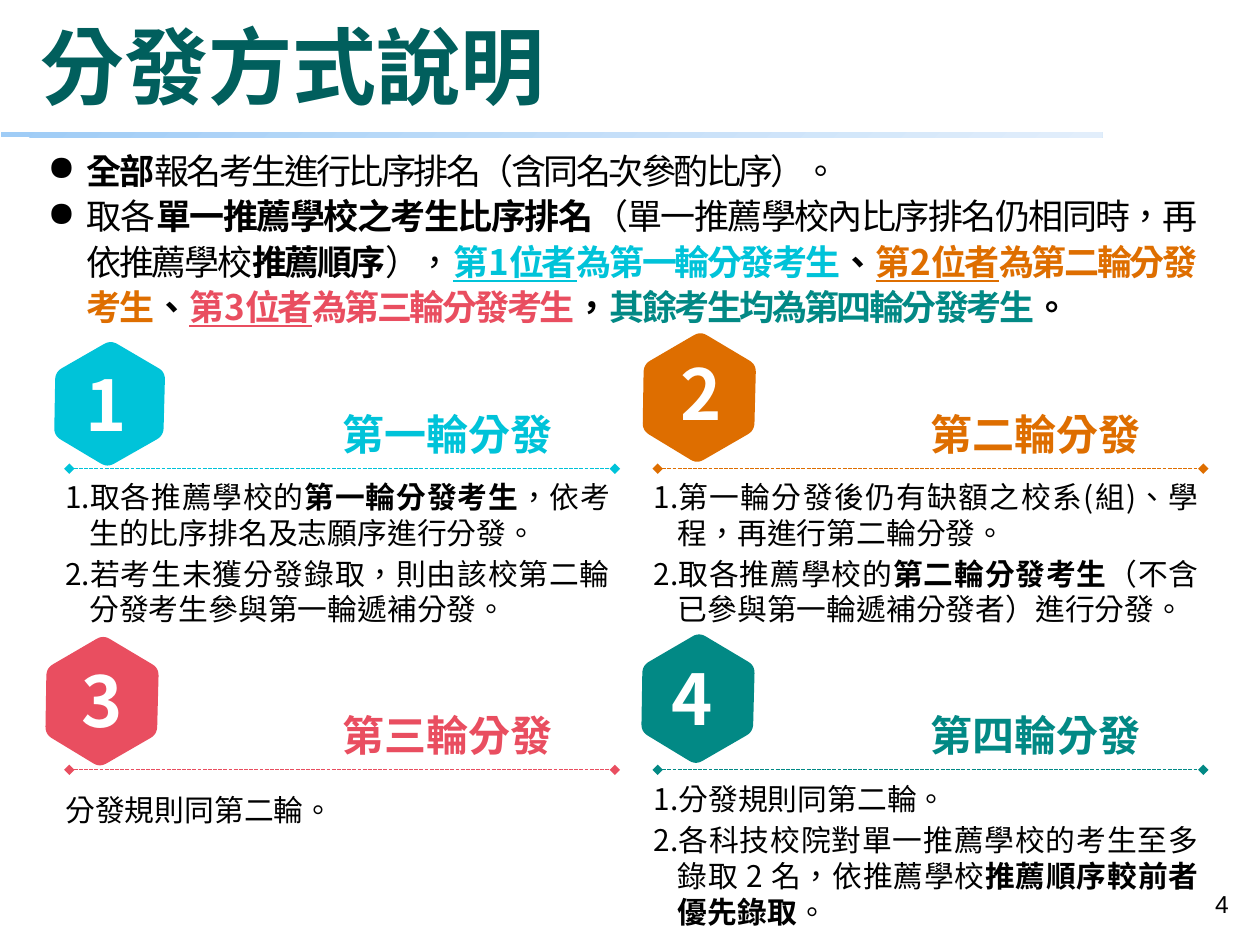
import math
import lxml.etree
import pptx
import pptx.dml.color
import pptx.enum.dml
import pptx.enum.shapes
import pptx.enum.text
import pptx.oxml.ns
import pptx.util

RGB = pptx.dml.color.RGBColor
CYAN = RGB(0x00, 0xC3, 0xD9)
ORANGE = RGB(0xDE, 0x6E, 0x00)
RED = RGB(0xE9, 0x4E, 0x60)
TEAL = RGB(0x02, 0x89, 0x85)
DARK = RGB(0x01, 0x5F, 0x5D)
PALE = RGB(0xE2, 0xEE, 0xFB)
SKY = RGB(0x9F, 0xCC, 0xF6)
BLACK = RGB(0, 0, 0)
WHITE = RGB(255, 255, 255)

COLS, ROWS = 100, 75
CORNERS = [(0.02, -1), (1, -0.5), (0.97, 0.5), (-0.04, 1), (-1, 0.5), (-0.98, -0.5)]
ALIGN = pptx.enum.text.PP_ALIGN
ANCHOR = pptx.enum.text.MSO_ANCHOR
FIT = pptx.enum.text.MSO_AUTO_SIZE


def add_node(parent, tag, **attrs):
    node = lxml.etree.SubElement(parent, pptx.oxml.ns.qn(tag))
    for name, value in attrs.items():
        node.set(name, value)
    return node


def write(para, text, size=17, color=BLACK, bold=False, under=False,
          face="Noto Sans CJK SC", track=None):
    run = para.add_run()
    run.text = text
    font = run.font
    font.size = pptx.util.Pt(size)
    font.bold = bold
    font.underline = under
    font.color.rgb = color
    font.name = face
    props = run._r.get_or_add_rPr()
    props.set("lang", "zh-TW")
    if track is not None:
        props.set("spc", str(round(track * 100)))
    add_node(props, "a:ea", typeface=face)


class Board:
    def __init__(self):
        self.deck = pptx.Presentation()
        self.deck.slide_width = pptx.util.Inches(10)
        self.deck.slide_height = pptx.util.Inches(7.5)
        self.slide = self.deck.slides.add_slide(self.deck.slide_layouts[5])
        self.shapes = self.slide.shapes

    def x(self, cols):
        return round(self.deck.slide_width * cols / COLS)

    def y(self, rows):
        return round(self.deck.slide_height * rows / ROWS)

    def box(self, left, top, width, height):
        return self.x(left), self.y(top), self.x(width), self.y(height)

    def title(self, text, *place):
        shape = self.shapes.title
        shape.left, shape.top, shape.width, shape.height = self.box(*place)
        frame = shape.text_frame
        frame.auto_size = FIT.NONE
        frame.vertical_anchor = ANCHOR.MIDDLE
        para = frame.paragraphs[0]
        para.alignment = ALIGN.LEFT
        write(para, text, size=48, color=DARK, bold=True)

    def bar(self, *place):
        shape = self.shapes.add_shape(
            pptx.enum.shapes.MSO_SHAPE.RECTANGLE, *self.box(*place))
        shape.shadow.inherit = False
        shape.line.fill.background()
        shape.fill.gradient()
        shape.fill.gradient_angle = 315
        for stop, color in zip(shape.fill.gradient_stops, (SKY, PALE)):
            stop.color.rgb = color

    def text(self, place, items, align=ALIGN.LEFT, anchor=ANCHOR.TOP, wrap=True,
             lead=None, after=None, mark=None, indent=0, **style):
        frame = self.shapes.add_textbox(*self.box(*place)).text_frame
        frame.word_wrap = wrap
        frame.auto_size = FIT.SHAPE_TO_FIT_TEXT
        frame.vertical_anchor = anchor
        for index, runs in enumerate(items):
            para = frame.add_paragraph() if index else frame.paragraphs[0]
            para.alignment = align
            para.line_spacing = lead
            if after and index < len(items) - 1:
                para.space_after = pptx.util.Pt(after)
            if mark:
                self.mark(para, mark, indent)
            for words, extra in runs:
                write(para, words, **{**style, **extra})

    def mark(self, para, mark, indent):
        props = para._p.get_or_add_pPr()
        props.set("marL", str(self.x(indent)))
        props.set("indent", str(-self.x(indent)))
        if mark == "1.":
            add_node(props, "a:buFont", typeface="+mj-lt")
            add_node(props, "a:buAutoNum", type="arabicPeriod")
        else:
            add_node(props, "a:buChar", char=mark)

    def line(self, left, right, top, color):
        line = self.shapes.add_connector(
            pptx.enum.shapes.MSO_CONNECTOR.STRAIGHT,
            self.x(left), self.y(top), self.x(right), self.y(top))
        line.line.color.rgb = color
        line.line.width = pptx.util.Pt(0.75)
        line.line.dash_style = pptx.enum.dml.MSO_LINE.SQUARE_DOT
        pen = line.line._get_or_add_ln()
        add_node(pen, "a:headEnd", type="diamond")
        add_node(pen, "a:tailEnd", type="diamond")
        add_node(line._element.spPr, "a:effectLst")

    def hexagon(self, mid, half, color, curve=0.6, steps=6):
        tips = [(mid[0] + half[0] * u, mid[1] + half[1] * v) for u, v in CORNERS]
        dots = []
        for i, tip in enumerate(tips):
            ends = []
            for other in (tips[i - 1], tips[(i + 1) % len(tips)]):
                share = curve / math.dist(tip, other)
                ends.append([a + (b - a) * share for a, b in zip(tip, other)])
            for step in range(steps + 1):
                t = step / steps
                px, py = [(1 - t) ** 2 * a + 2 * t * (1 - t) * b + t * t * c
                          for a, b, c in zip(ends[0], tip, ends[1])]
                dots.append((self.x(px), self.y(py)))
        form = self.shapes.build_freeform(*dots[0])
        form.add_line_segments(dots[1:], close=True)
        shape = form.convert_to_shape()
        shape.shadow.inherit = False
        shape.fill.solid()
        shape.fill.fore_color.rgb = color
        shape.line.fill.background()

    def round(self, index, name, color, mid, half, digit, items, **style):
        row, col = divmod(index, 2)
        left, top = col * 46.7, row * 23.9
        self.hexagon(mid, half, color)
        self.line(5.5 + left, 48.8 + left, 37.2 + top, color)
        self.text((26.2 + left, 31.9 + top, 18.8, 5), [[(name, {})]],
                  anchor=ANCHOR.MIDDLE, wrap=False, size=24, color=color, bold=True)
        self.text((4.2 + left, 37.5 + row * 24, 45.2, 12.9), items, **style)
        self.text((*digit, 4.1, 7.7), [[(str(index + 1), {})]],
                  size=40, color=WHITE, bold=True)


def main():
    board = Board()
    bold, plain = {"bold": True}, {}
    board.bar(0.1, 10.5, 87.4, 0.4)
    board.title("分發方式說明", 2.2, 1.7, 90, 6.9)

    rule = [("取各", plain), ("單一推薦學校之考生比序排名", bold),
            ("（單一推薦學校內比序排名仍相同時，再依推薦學校", plain),
            ("推薦順序", bold), ("），", plain)]
    for rank, name, color, stop in (("第1位者", "為第一輪分發考生", CYAN, "、"),
                                    ("第2位者", "為第二輪分發考生", ORANGE, "、"),
                                    ("第3位者", "為第三輪分發考生", RED, "，")):
        rule += [(rank, {"color": color, "bold": True, "under": True}),
                 (name, {"color": color, "bold": True}), (stop, bold)]
    rule += [("其餘考生均為第四輪分發考生", {"color": TEAL, "bold": True}), ("。", bold)]
    intro = [("全部", bold), ("報名考生進行比序排名（含同名次參酌比序）。", plain)]
    board.text((2.8, 11.1, 93, 15.4), [intro, rule], align=ALIGN.JUSTIFY,
               lead=pptx.util.Pt(26), mark="●", indent=3.1, size=20, track=-1.5)

    steps = {"align": ALIGN.JUSTIFY, "mark": "1.", "indent": 1.9, "after": 3}
    same = [("分發規則同第二輪。", plain)]
    first = [[("取各推薦學校的", plain), ("第一輪分發考生", bold),
              ("，依考生的比序排名及志願序進行分發。", plain)],
             [("若考生未獲分發錄取，則由該校第二輪分發考生參與第一輪遞補分發。", plain)]]
    second = [[("第一輪分發後仍有缺額之校系(組)、學程，再進行第二輪分發。", plain)],
              [("取各推薦學校的", plain), ("第二輪分發考生", bold),
               ("（不含已參與第一輪遞補分發者）進行分發。", plain)]]
    fourth = [same, [("各科技校院對單一推薦學校的考生至多錄取 2 名，依推薦學校", plain),
                     ("推薦順序較前者優先錄取", bold), ("。", plain)]]
    wide = (4.5, 5.25)
    rounds = [
        ("第一輪分發", CYAN, (8.7, 32.05), (4.4, 5.05), (5.8, 28.2), first, steps),
        ("第二輪分發", ORANGE, (55.5, 31.55), wide, (53, 27.3), second, steps),
        ("第三輪分發", RED, (8.1, 55.65), wide, (5.5, 51.7), [same], {"lead": 1.3}),
        ("第四輪分發", TEAL, (55.4, 55.45), wide, (52.3, 51.5), fourth, steps),
    ]
    for index, (*parts, style) in enumerate(rounds):
        board.round(index, *parts, **style)

    board.text((75.2, 70.1, 23.3, 5.2), [[("4", plain)]],
               align=ALIGN.RIGHT, size=14, face="Arial")
    board.deck.save("out.pptx")


if __name__ == "__main__":
    main()
